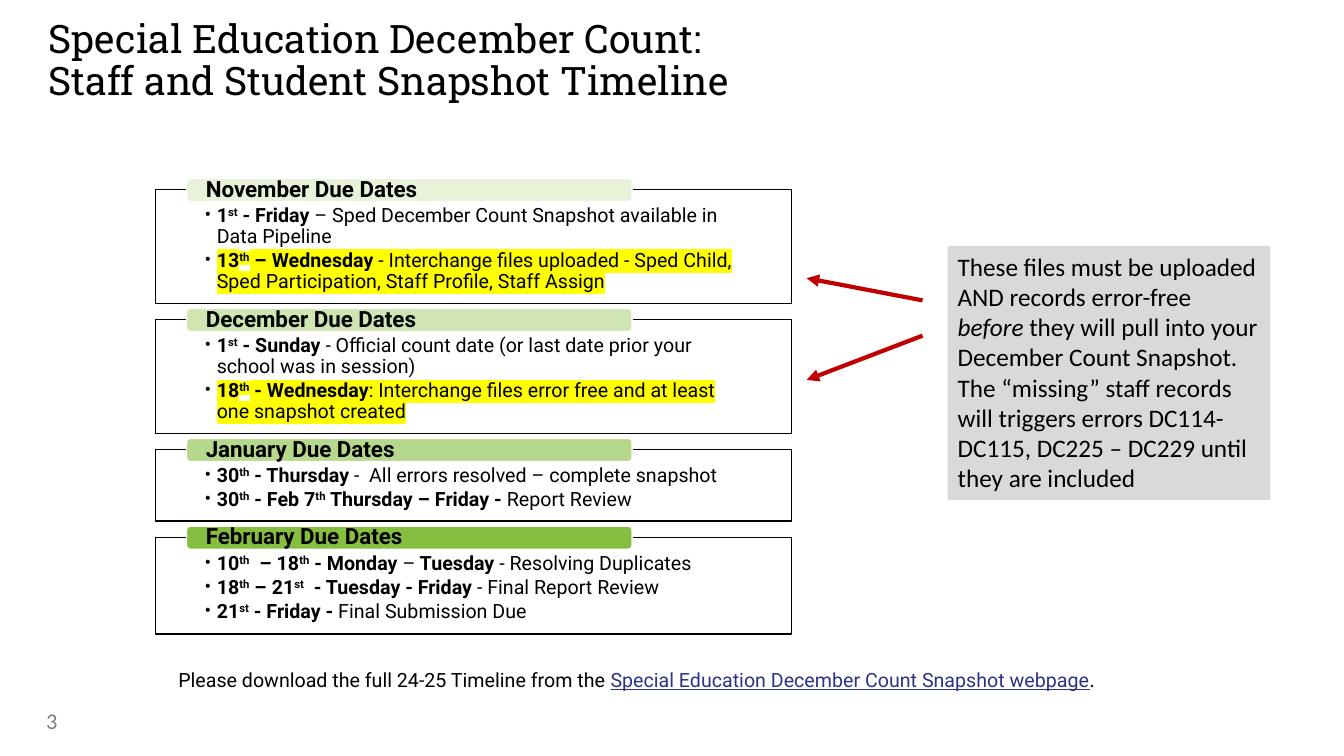
from lxml import etree
from pptx import Presentation
from pptx.dml.color import RGBColor
from pptx.enum.shapes import MSO_CONNECTOR, MSO_SHAPE
from pptx.enum.text import MSO_ANCHOR, PP_ALIGN
from pptx.oxml.ns import qn
from pptx.util import Pt

PX = 9144  # 100 px to the inch
BLACK = RGBColor(0x00, 0x00, 0x00)
WHITE = RGBColor(0xFF, 0xFF, 0xFF)
GREY = RGBColor(0x80, 0x80, 0x80)
NOTE_GREY = RGBColor(0xD9, 0xD9, 0xD9)
LINK_BLUE = RGBColor(0x2C, 0x33, 0x84)
ARROW_RED = RGBColor(0xC0, 0x00, 0x00)
YELLOW = RGBColor(0xFF, 0xFF, 0x00)

# Run styles: b bold, s superscript, i italic, h highlighted, n starts a new line
MONTHS = [
    ("November Due Dates", RGBColor(0xE7, 0xF2, 0xD9), 113, [
        [("1", "b"), ("st", "bs"), (" - Friday ", "b"),
         ("– Sped December Count Snapshot available in Data Pipeline", "")],
        [("13", "bh"), ("th", "bsh"), (" – Wednesday ", "bh"),
         ("- Interchange files uploaded - Sped Child, Sped Participation, "
          "Staff Profile, Staff Assign", "h")],
    ]),
    ("December Due Dates", RGBColor(0xCF, 0xE5, 0xB2), 113, [
        [("1", "b"), ("st", "bs"), (" - Sunday", "b"), (" - ", "i"),
         ("Official count date (or last date prior your school was in session)", "")],
        [("18", "bh"), ("th", "bsh"), (" - Wednesday", "bh"),
         (": Interchange files error free and at least one snapshot created", "h")],
    ]),
    ("January Due Dates", RGBColor(0xB6, 0xD8, 0x8C), 71, [
        [("30", "b"), ("th", "bs"), (" - Thursday ", "b"), ("-", "i"),
         ("  All errors resolved – complete snapshot", "")],
        [("30", "b"), ("th", "bs"), (" - Feb 7", "b"), ("th", "bs"),
         (" Thursday – Friday - ", "b"), ("Report Review", "")],
    ]),
    ("February Due Dates", RGBColor(0x86, 0xBE, 0x40), 96, [
        [("10", "b"), ("th", "bs"), ("  – 18", "b"), ("th", "bs"), (" - Monday ", "b"),
         ("–", ""), (" Tuesday ", "b"), ("- Resolving Duplicates", "")],
        [("18", "b"), ("th", "bs"), (" – 21", "b"), ("st", "bs"),
         ("  - Tuesday - Friday", "b"), (" - Final Report Review", "")],
        [("21", "b"), ("st", "bs"), (" - Friday - ", "b"), ("Final Submission Due", "")],
    ]),
]
NOTE = [
    [("These files must be uploaded AND records error-free ", ""), ("before", "i"),
     (" they will pull into your December Count Snapshot.", "")],
    [("The “missing” staff records will triggers errors DC114-DC115, "
      "DC225 – DC229 until they are included", "")],
]


def add_box(bounds, fill=None, line=None, preset=MSO_SHAPE.RECTANGLE,
            margins=(10, 5, 10, 5), anchor=MSO_ANCHOR.TOP):
    """Add a wrapping text box, or a preset shape when a fill is given."""
    bounds = [length * PX for length in bounds]
    if fill is None:
        shape = slide.shapes.add_textbox(*bounds)
    else:
        shape = slide.shapes.add_shape(preset, *bounds)
        shape.shadow.inherit = False
        shape.fill.solid()
        shape.fill.fore_color.rgb = fill
        if line is None:
            shape.line.fill.background()
        else:
            shape.line.color.rgb = line
            shape.line.width = Pt(1)
    frame = shape.text_frame
    frame.word_wrap = True
    frame.vertical_anchor = anchor
    (frame.margin_left, frame.margin_top,
     frame.margin_right, frame.margin_bottom) = [margin * PX for margin in margins]
    return frame


def write(frame, paragraphs, font_name, size, color=BLACK, spacing=1.0, bullet=False):
    """Fill a frame with paragraphs made of (text, style) runs."""
    for index, runs in enumerate(paragraphs):
        paragraph = frame.add_paragraph() if index else frame.paragraphs[0]
        paragraph.alignment = PP_ALIGN.LEFT
        paragraph.line_spacing = spacing
        if bullet:
            paragraph.space_after = Pt(2)
            properties = paragraph._p.get_or_add_pPr()
            properties.set("marL", str(12 * PX))
            properties.set("indent", str(-12 * PX))
            etree.SubElement(properties, qn("a:buFont"), typeface=font_name)
            etree.SubElement(properties, qn("a:buChar"), char="•")
        paragraph.font.name = font_name
        paragraph.font.size = Pt(size)
        paragraph.font.color.rgb = color
        for text, style in runs:
            if "n" in style:
                paragraph.add_line_break()
            run = paragraph.add_run()
            run.text = text
            if "b" in style:
                run.font.bold = True
            if "i" in style:
                run.font.italic = True
            if "s" in style:
                run._r.get_or_add_rPr().set("baseline", "30000")
            if "h" in style:
                highlight = etree.SubElement(run._r.get_or_add_rPr(), qn("a:highlight"))
                etree.SubElement(highlight, qn("a:srgbClr"), val=str(YELLOW))


presentation = Presentation()
presentation.slide_width = 1333 * PX
presentation.slide_height = 750 * PX
slide = presentation.slides.add_slide(presentation.slide_layouts[5])

# Title
title = slide.shapes.title
title.left, title.top, title.width, title.height = [
    length * PX for length in (48, 19, 882, 98)]
title_frame = title.text_frame
title_frame.margin_left = title_frame.margin_top = 0
title_frame.margin_right = title_frame.margin_bottom = 0
title_frame.vertical_anchor = MSO_ANCHOR.TOP
write(title_frame, [[
    ("Special Education December Count:", ""),
    ("Staff and Student Snapshot Timeline", "n"),
]], "Roboto Slab", 28, spacing=0.9)

# Slide number and download line
number_frame = add_box((36, 695, 300, 40), anchor=MSO_ANCHOR.MIDDLE)
write(number_frame, [[("3", "")]], "Calibri", 16, GREY)

download_frame = add_box((167, 658, 951, 34))
write(download_frame, [[
    ("Please download the full 24-25 Timeline from the ", ""),
    ("Special Education December Count Snapshot webpage", ""), (".", ""),
]], "Roboto", 14)
_, link_run, full_stop = download_frame.paragraphs[0].runs
link_run.font.color.rgb = LINK_BLUE
link_run.font.underline = True
full_stop.font.name = "Calibri"

# Monthly due dates, stacked with equal gaps
top = 188
for month, tab_color, height, due_dates in MONTHS:
    dates_frame = add_box((154, top, 631, height), WHITE, BLACK, margins=(49, 16, 49, 11))
    write(dates_frame, due_dates, "Roboto", 14, spacing=0.9, bullet=True)
    tab_frame = add_box((185, top - 11, 442, 23), tab_color, WHITE,
                        MSO_SHAPE.ROUNDED_RECTANGLE, (18, 0, 18, 0), MSO_ANCHOR.MIDDLE)
    write(tab_frame, [[(month, "b")]], "Roboto", 16, spacing=0.9)
    top += height + 16

# Note and its arrows to the highlighted dates
write(add_box((940, 244, 320, 252), NOTE_GREY), NOTE, "Calibri", 18)
for start_y, end_y in ((298, 276), (333, 377)):
    arrow = slide.shapes.add_connector(
        MSO_CONNECTOR.STRAIGHT, 915 * PX, start_y * PX, 800 * PX, end_y * PX)
    arrow.line.color.rgb = ARROW_RED
    arrow.line.width = Pt(3)
    etree.SubElement(arrow.line._get_or_add_ln(), qn("a:tailEnd"), type="triangle")
    etree.SubElement(arrow._element.spPr, qn("a:effectLst"))

presentation.save("out.pptx")
